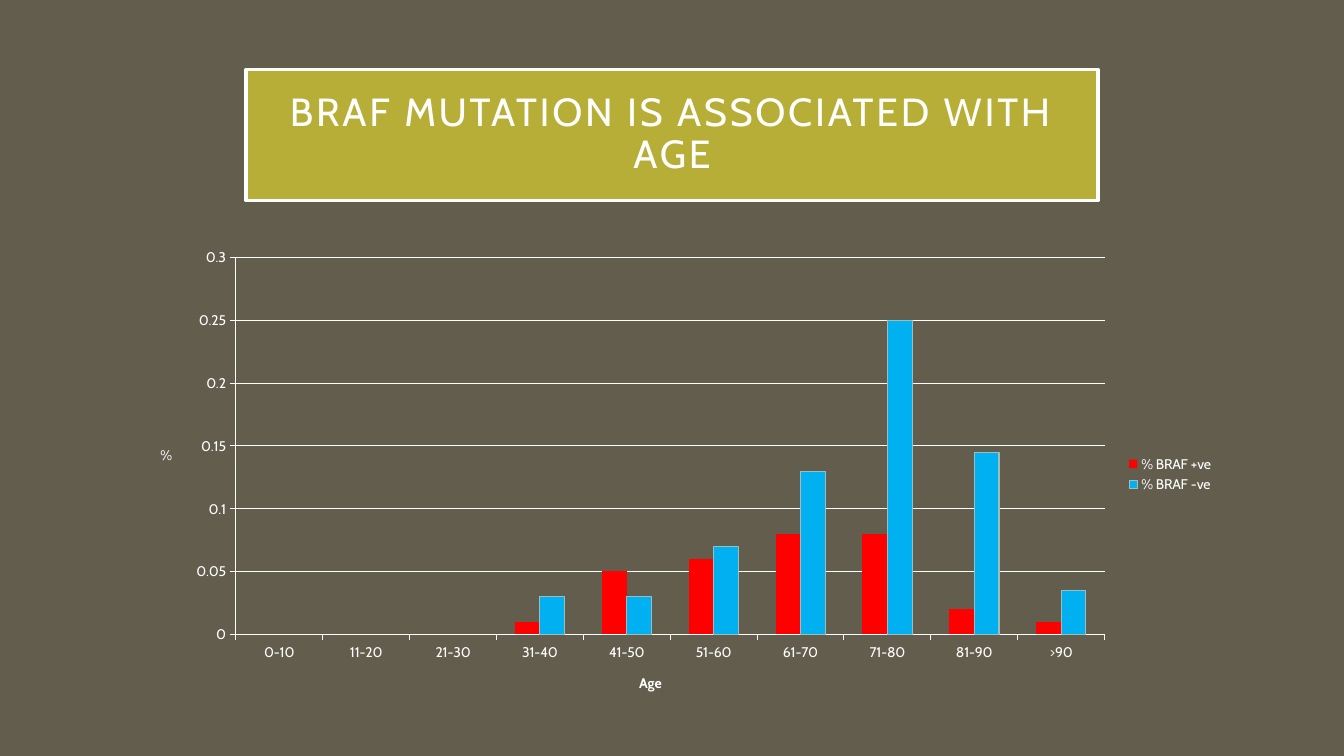
"""Build the slide on BRAF mutation and age."""
from dataclasses import dataclass
from typing import Optional

from lxml.etree import SubElement
from pptx import Presentation
from pptx.chart.axis import _BaseAxis as Axis
from pptx.chart.chart import Chart
from pptx.chart.data import CategoryChartData
from pptx.dml.color import RGBColor
from pptx.enum.chart import XL_CHART_TYPE as ChartType
from pptx.enum.chart import XL_LEGEND_POSITION as LegendPos
from pptx.enum.chart import XL_TICK_MARK as Tick
from pptx.enum.text import MSO_ANCHOR as Anchor
from pptx.enum.text import MSO_AUTO_SIZE as AutoSize
from pptx.enum.text import PP_ALIGN as Align
from pptx.oxml.ns import qn
from pptx.slide import Slide
from pptx.util import Emu, Pt

EMU_PER_PX = 9144
FONT = "Cabin"
WHITE = RGBColor(0xFF, 0xFF, 0xFF)
BROWN = RGBColor(0x63, 0x5D, 0x4D)
OLIVE = RGBColor(0xB7, 0xAE, 0x38)
RED = RGBColor(0xFF, 0x00, 0x00)
BLUE = RGBColor(0x00, 0xB0, 0xF0)
PALE_TEAL = RGBColor(0x9C, 0xBE, 0xBD)


@dataclass(frozen=True)
class AgeSeries:
    name: str
    values: tuple[Optional[float], ...]
    fill: RGBColor
    line: Optional[RGBColor] = None


AGES = ("0-10", "11-20", "21-30", "31-40", "41-50",
        "51-60", "61-70", "71-80", "81-90", ">90")
SERIES = (
    AgeSeries("% BRAF +ve", (None, None, None, 0.01, 0.05, 0.06, 0.08, 0.08, 0.02, 0.01), RED),
    AgeSeries("% BRAF -ve", (None, None, None, 0.03, 0.03, 0.07, 0.13, 0.25, 0.145, 0.035),
              BLUE, PALE_TEAL),
)
PLOT_LAYOUT = {"x": 0.09, "y": 0.04, "w": 0.8, "h": 0.8}


def px(n: int) -> Emu:
    return Emu(n * EMU_PER_PX)


def add_title(s: Slide, text: str) -> None:
    sp = s.shapes.title
    sp.left, sp.top, sp.width, sp.height = px(244), px(69), px(845), px(130)
    sp.fill.solid()
    sp.fill.fore_color.rgb = OLIVE
    sp.line.color.rgb = WHITE
    sp.line.width = Pt(2.5)
    tf = sp.text_frame
    tf.text = text
    tf.word_wrap = True
    tf.auto_size = AutoSize.NONE
    tf.vertical_anchor = Anchor.MIDDLE
    tf.margin_left = tf.margin_top = tf.margin_right = tf.margin_bottom = px(20)
    p = tf.paragraphs[0]
    p.alignment = Align.CENTER
    p.line_spacing = 0.9
    r = p.runs[0]
    r.font.name, r.font.size = FONT, Pt(28)
    r.font.color.rgb = WHITE
    r.font._element.set("spc", "200")


def style_axis(axis: Axis, title: str, bold: bool) -> None:
    axis.major_tick_mark = Tick.OUTSIDE
    axis.minor_tick_mark = Tick.NONE
    axis.format.line.color.rgb = WHITE
    axis.format.line.width = Pt(0.75)
    tf = axis.axis_title.text_frame
    tf.text = title
    r = tf.paragraphs[0].runs[0]
    r.font.name, r.font.size, r.font.bold = FONT, Pt(10), bold
    r.font.color.rgb = WHITE


def place_plot(chart: Chart) -> None:
    area = chart._chartSpace.chart.plotArea
    for old in area.findall(qn("c:layout")):
        area.remove(old)
    layout = SubElement(area, qn("c:layout"))
    area.insert(0, layout)
    manual = SubElement(layout, qn("c:manualLayout"))
    settings = {"layoutTarget": "inner", "xMode": "edge", "yMode": "edge", **PLOT_LAYOUT}
    for name, value in settings.items():
        SubElement(manual, qn(f"c:{name}")).set("val", str(value))


def add_age_chart(s: Slide) -> None:
    data = CategoryChartData()
    data.categories = AGES
    for item in SERIES:
        data.add_series(item.name, item.values)
    chart = s.shapes.add_chart(ChartType.COLUMN_CLUSTERED, px(137), px(237),
                               px(1077), px(467), data).chart
    chart.has_title = False
    chart.font.name, chart.font.size = FONT, Pt(10)
    chart.font.color.rgb = WHITE
    chart.has_legend = True
    chart.legend.position = LegendPos.RIGHT
    chart.legend.include_in_layout = False

    plot = chart.plots[0]
    plot.gap_width, plot.overlap = 150, 0
    plot.vary_by_categories = False
    for item, series in zip(SERIES, plot.series):
        series.format.fill.solid()
        series.format.fill.fore_color.rgb = item.fill
        if item.line is None:
            series.format.line.fill.background()
        else:
            series.format.line.color.rgb = item.line
            series.format.line.width = Pt(0.75)

    style_axis(chart.category_axis, "Age", True)
    axis = chart.value_axis
    style_axis(axis, "%", False)
    axis.axis_title.text_frame._txBody.bodyPr.set("rot", "0")
    axis.minimum_scale, axis.maximum_scale, axis.major_unit = 0, 0.3, 0.05
    axis.has_major_gridlines = True
    axis.major_gridlines.format.line.color.rgb = WHITE
    axis.major_gridlines.format.line.width = Pt(0.75)
    place_plot(chart)


def main() -> None:
    prs = Presentation()
    prs.slide_width, prs.slide_height = px(1333), px(750)
    s = prs.slides.add_slide(prs.slide_layouts[5])
    s.background.fill.solid()
    s.background.fill.fore_color.rgb = BROWN
    add_title(s, "BRAF MUTATION IS ASSOCIATED WITH AGE")
    add_age_chart(s)
    prs.save("out.pptx")


if __name__ == "__main__":
    main()
